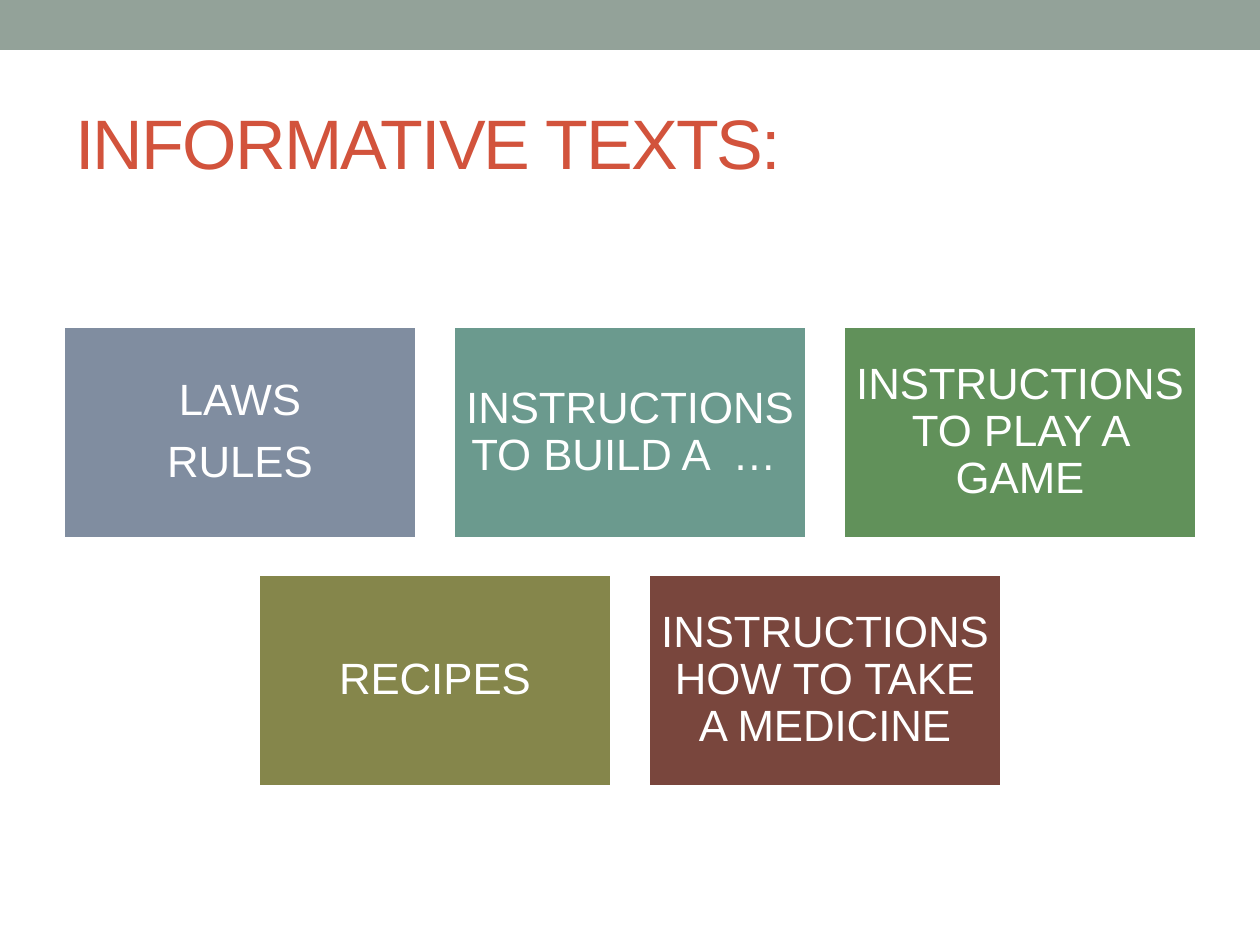
from pptx import Presentation
from pptx.dml.color import RGBColor
from pptx.enum.shapes import MSO_SHAPE
from pptx.enum.text import MSO_ANCHOR, PP_ALIGN
from pptx.util import Pt

RECT = MSO_SHAPE.RECTANGLE
MIDDLE = MSO_ANCHOR.MIDDLE
CENTER = PP_ALIGN.CENTER

WIDE, HIGH = 1260, 945
SCALE = 914400 / 126
TILE_W, TILE_H, GAP = 354, 213, 36
TOP, STEP = 326, 248

COLORS = {
    "band": "93A299",
    "title": "D2533C",
    "white": "FFFFFF",
    "slate": "808DA0",
    "teal": "6B9A8E",
    "green": "61915A",
    "olive": "85864B",
    "brown": "79463D",
}

ROWS = [
    [
        ("slate", "LAWS\nRULES"),
        ("teal", "INSTRUCTIONS TO BUILD A  … "),
        ("green", "INSTRUCTIONS TO PLAY A GAME"),
    ],
    [
        ("olive", "RECIPES"),
        ("brown", "INSTRUCTIONS HOW TO TAKE A MEDICINE"),
    ],
]


def px(n):
    return round(n * SCALE)


def rgb(name):
    return RGBColor.from_string(COLORS[name])


def style(par, size, color):
    for run in par.runs:
        run.font.name = "Arial"
        run.font.size = Pt(size)
        run.font.color.rgb = rgb(color)


def add_rect(slide, box, color):
    shape = slide.shapes.add_shape(RECT, *map(px, box))
    shape.shadow.inherit = False
    shape.fill.solid()
    shape.fill.fore_color.rgb = rgb(color)
    shape.line.fill.background()
    return shape


def add_title(slide, text):
    frame = slide.shapes.add_textbox(*map(px, (63, 73, 1134, 136))).text_frame
    frame.word_wrap = True
    frame.vertical_anchor = MIDDLE
    frame.text = text
    par = frame.paragraphs[0]
    style(par, 40, "title")
    # Tighten the letters by one point
    par.runs[0].font._element.set("spc", "-100")


def add_tile(slide, left, top, color, text):
    tile = add_rect(slide, (left, top, TILE_W, TILE_H), color)
    tile.line.color.rgb = rgb("white")
    tile.line.width = Pt(2)
    frame = tile.text_frame
    frame.word_wrap = True
    frame.vertical_anchor = MIDDLE
    frame.margin_left = frame.margin_right = px(12)
    frame.margin_top = frame.margin_bottom = px(12)
    frame.text = text
    for par in frame.paragraphs:
        par.alignment = CENTER
        par.line_spacing = 0.9
        par.space_after = Pt(8.75)
        style(par, 25, "white")


def add_row(slide, top, tiles):
    # Each row is centred on the slide
    span = len(tiles) * (TILE_W + GAP) - GAP
    left = (WIDE - span) // 2
    for i, (color, text) in enumerate(tiles):
        add_tile(slide, left + i * (TILE_W + GAP), top, color, text)


def main():
    deck = Presentation()
    deck.slide_width, deck.slide_height = px(WIDE), px(HIGH)
    slide = deck.slides.add_slide(deck.slide_layouts[6])

    # Top band and title
    add_rect(slide, (0, 0, WIDE, 50), "band")
    add_title(slide, "INFORMATIVE TEXTS:")

    # Tiles
    for i, tiles in enumerate(ROWS):
        add_row(slide, TOP + i * STEP, tiles)

    deck.save("out.pptx")


if __name__ == "__main__":
    main()
